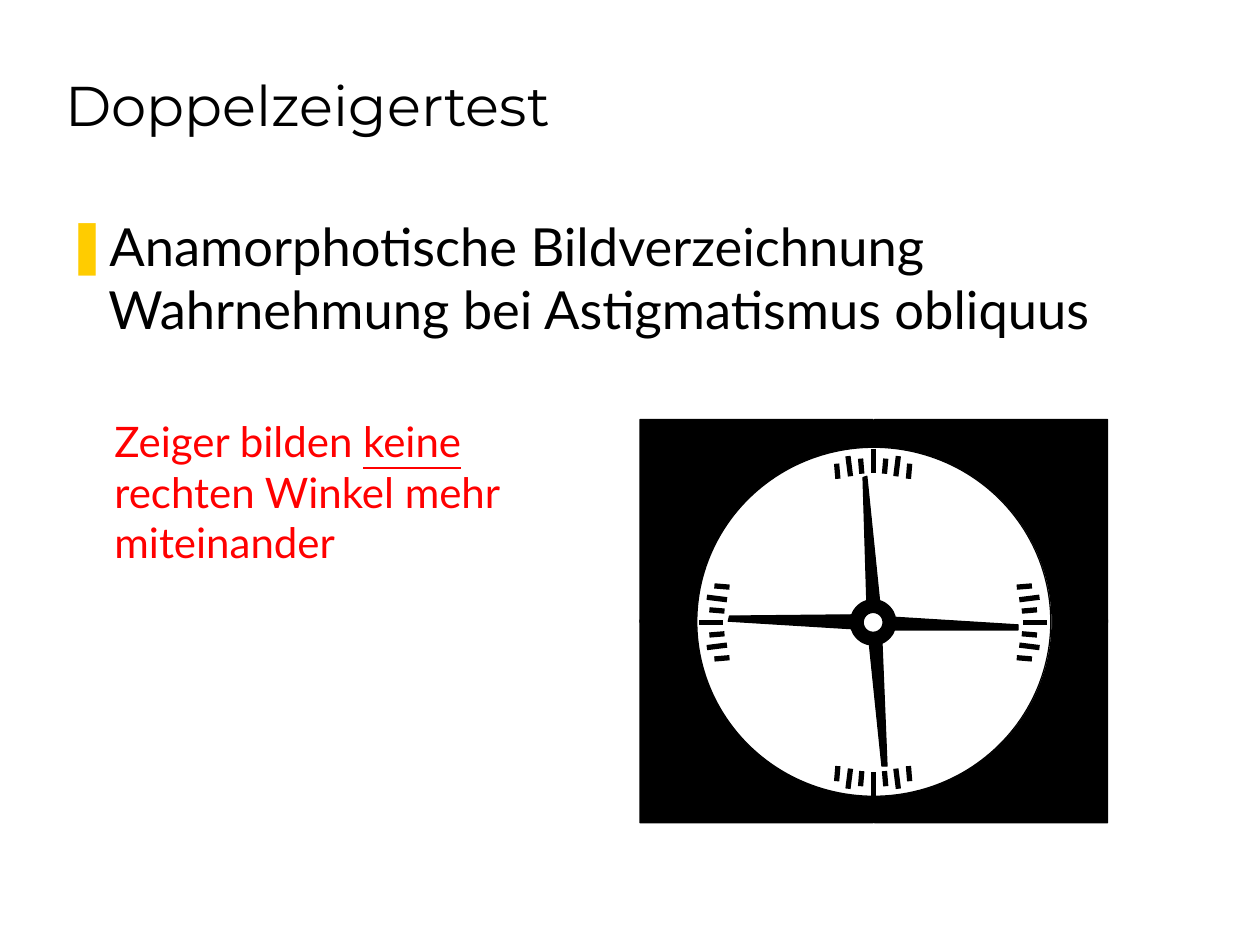
"""Build the slide on the double-pointer test for astigmatism."""
from dataclasses import dataclass
from itertools import product

from lxml import etree
from pptx import Presentation
from pptx.dml.color import RGBColor
from pptx.enum.shapes import MSO_CONNECTOR, MSO_SHAPE
from pptx.enum.text import MSO_ANCHOR, MSO_AUTO_SIZE, PP_ALIGN
from pptx.oxml.ns import qn
from pptx.util import Pt

PX = 9144
BLACK = RGBColor(0x00, 0x00, 0x00)
WHITE = RGBColor(0xFF, 0xFF, 0xFF)
RED = RGBColor(0xFF, 0x00, 0x00)
BULLET_COLOR = "FFCC00"
OVAL, STRAIGHT = MSO_SHAPE.OVAL, MSO_CONNECTOR.STRAIGHT
TOP, BOTTOM = MSO_ANCHOR.TOP, MSO_ANCHOR.BOTTOM
LEFT, NO_FIT = PP_ALIGN.LEFT, MSO_AUTO_SIZE.NONE

TITLE_FONT = {"name": "Montserrat", "size": Pt(32), "bold": False}
BODY_FONT = {"name": "Lato", "size": Pt(30)}
NOTE_FONT = {"name": "Lato", "size": Pt(24)}


@dataclass(frozen=True)
class Box:
    x: int
    y: int
    w: int
    h: int

    def emu(self) -> tuple:
        return tuple(v * PX for v in (self.x, self.y, self.w, self.h))


@dataclass(frozen=True)
class Tick:
    outer_side: int
    inner_side: int
    outer: int
    inner: int


@dataclass(frozen=True)
class Disc:
    box: Box
    fill: RGBColor | None
    line_pt: float


CENTER = (693, 494)
DIRECTIONS = ((0, -1), (1, 0), (0, 1), (-1, 0))
TICKS = (
    Tick(0, 0, 138, 119),
    Tick(10, 9, 130, 118),
    Tick(20, 18, 132, 116),
    Tick(29, 28, 126, 114),
)
CORNER = (
    (508, 494), (508, 333), (693, 333), (693, 373), (680, 374), (668, 376),
    (658, 378), (648, 380), (636, 385), (623, 391), (606, 401), (594, 412),
    (581, 423), (573, 435), (563, 453), (557, 472), (554, 485), (554, 494),
)
MIRROR_X, MIRROR_Y = 1387, 986
HANDS = (
    ((698, 476), (688, 378), (685, 379), (688, 477)),
    ((700, 510), (704, 608), (700, 608), (690, 511)),
    ((677, 488), (579, 489), (578, 493), (676, 499)),
    ((711, 490), (808, 496), (808, 500), (710, 500)),
)
DIALS = (
    Disc(Box(554, 355, 281, 277), WHITE, 0.75),
    Disc(Box(553, 355, 281, 277), WHITE, 0.75),
)
HUB = Disc(Box(680, 481, 26, 26), None, 8)


def set_font(font, values: dict, color: RGBColor) -> None:
    for name, value in values.items():
        setattr(font, name, value)
    font.color.rgb = color


def set_frame(tf, anchor) -> None:
    values = {"word_wrap": True, "auto_size": NO_FIT, "vertical_anchor": anchor}
    for name, value in values.items():
        setattr(tf, name, value)


def place(sp, box: Box) -> None:
    for name, value in zip(("left", "top", "width", "height"), box.emu()):
        setattr(sp, name, value)


def fill_placeholder(sp, box: Box, text: str, anchor, font: dict):
    place(sp, box)
    set_frame(sp.text_frame, anchor)
    p = sp.text_frame.paragraphs[0]
    p.text = text
    p.alignment = LEFT
    p.space_before = Pt(0)
    for r in p.runs:
        set_font(r.font, font, BLACK)
    return p


def add_bullet(p, char: str, indent: int) -> None:
    pPr = p._p.get_or_add_pPr()
    pPr.set("marL", str(indent * PX))
    pPr.set("indent", str(-indent * PX))
    color = etree.SubElement(pPr, qn("a:buClr"))
    etree.SubElement(color, qn("a:srgbClr"), val=BULLET_COLOR)
    etree.SubElement(pPr, qn("a:buChar"), char=char)


def add_note(shapes, box: Box, parts: tuple) -> None:
    tf = shapes.add_textbox(*box.emu()).text_frame
    set_frame(tf, TOP)
    p = tf.paragraphs[0]
    for text, underline in parts:
        r = p.add_run()
        r.text = text
        set_font(r.font, {**NOTE_FONT, "underline": underline}, RED)


def style_shape(sp, fill: RGBColor | None, line_pt: float) -> None:
    sp.shadow.inherit = False
    if fill is None:
        sp.fill.background()
    else:
        sp.fill.solid()
        sp.fill.fore_color.rgb = fill
    sp.line.color.rgb = BLACK
    sp.line.width = Pt(line_pt)


def add_polygon(shapes, points) -> None:
    first, *rest = points
    builder = shapes.build_freeform(*first, scale=PX)
    builder.add_line_segments(rest, close=True)
    style_shape(builder.convert_to_shape(), BLACK, 0.75)


def add_disc(shapes, disc: Disc) -> None:
    style_shape(shapes.add_shape(OVAL, *disc.box.emu()), disc.fill, disc.line_pt)


def add_tick(shapes, tick: Tick, direction: tuple, side: int) -> None:
    (cx, cy), (dx, dy) = CENTER, direction
    ends = []
    for radius, offset in ((tick.outer, tick.outer_side), (tick.inner, tick.inner_side)):
        ends += [(cx + dx * radius - dy * side * offset) * PX,
                 (cy + dy * radius + dx * side * offset) * PX]
    line = shapes.add_connector(STRAIGHT, *ends)
    line.line.color.rgb = BLACK
    line.line.width = Pt(3)
    etree.SubElement(line._element.spPr, qn("a:effectLst"))


def add_clock(shapes) -> None:
    for flip_y, flip_x in product((False, True), repeat=2):
        add_polygon(shapes, [(MIRROR_X - x if flip_x else x,
                              MIRROR_Y - y if flip_y else y) for x, y in CORNER])
    for dial in DIALS:
        add_disc(shapes, dial)
    for direction, tick in product(DIRECTIONS, TICKS):
        for side in (-1, 1) if tick.outer_side else (1,):
            add_tick(shapes, tick, direction, side)
    add_disc(shapes, HUB)
    for hand in HANDS:
        add_polygon(shapes, hand)


def main() -> None:
    prs = Presentation()
    prs.slide_width, prs.slide_height = 1000 * PX, 750 * PX
    s = prs.slides.add_slide(prs.slide_layouts[1])
    fill_placeholder(s.shapes.title, Box(42, 24, 916, 90),
                     "Doppelzeigertest", BOTTOM, TITLE_FONT)
    p = fill_placeholder(
        s.placeholders[1], Box(42, 165, 917, 160),
        "Anamorphotische Bildverzeichnung\vWahrnehmung bei Astigmatismus obliquus",
        TOP, BODY_FONT)
    add_bullet(p, "❚", 34)
    add_clock(s.shapes.add_group_shape().shapes)
    add_note(s.shapes, Box(81, 325, 333, 130), (
        ("Zeiger bilden ", False),
        ("keine", True),
        (" rechten Winkel mehr miteinander", False),
    ))
    prs.save("out.pptx")


if __name__ == "__main__":
    main()
